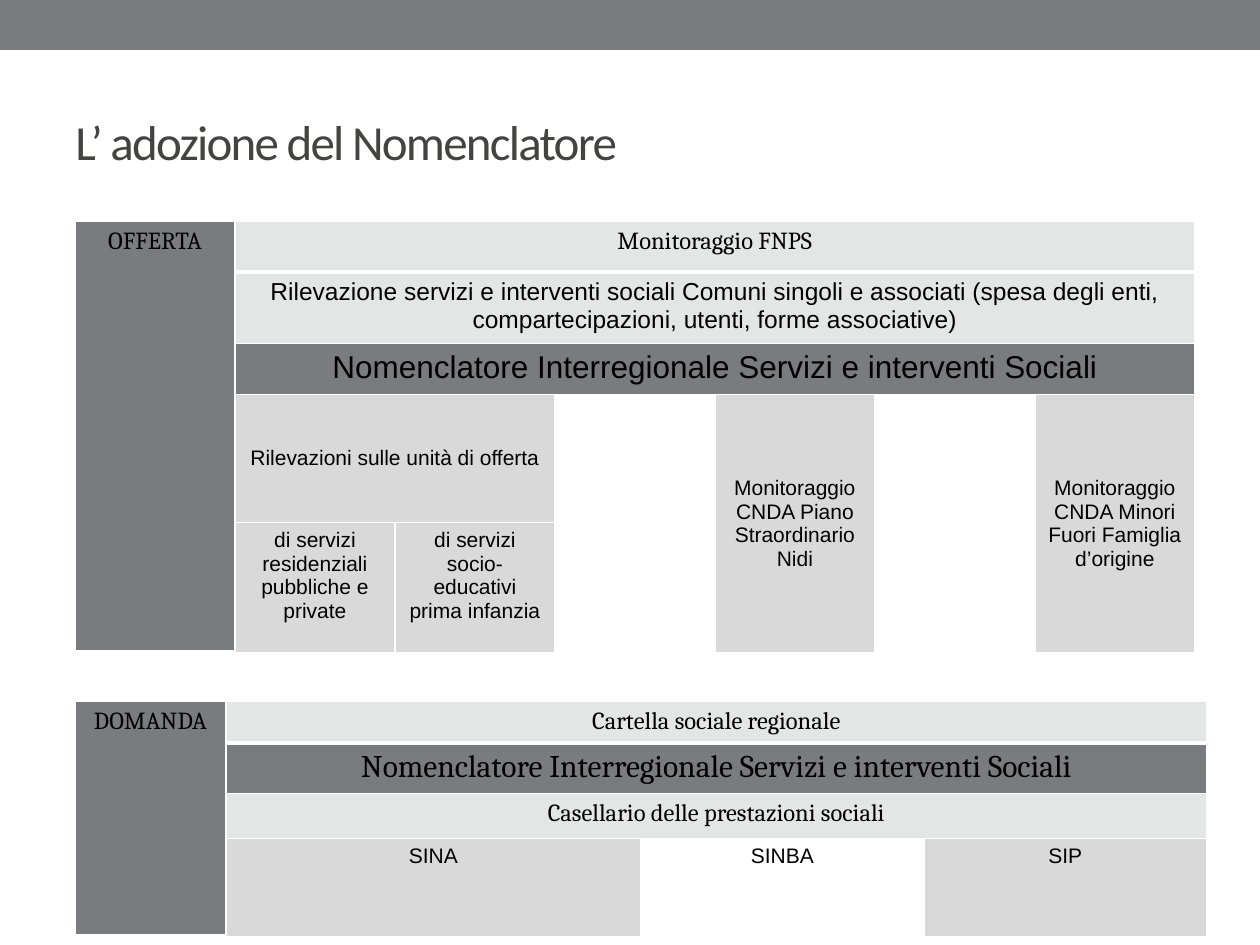
from dataclasses import dataclass

from lxml import etree
from pptx import Presentation
from pptx import util as u
from pptx.dml.color import RGBColor
from pptx.enum import shapes, text
from pptx.oxml.ns import qn


@dataclass(frozen=True)
class Theme:
    dark: str = "797B7E"
    pale: str = "E4E5E5"
    grey: str = "D9D9D9"
    white: str = "FFFFFF"
    black: str = "000000"
    ink: str = "434342"
    head: str = "Calibri"
    serif: str = "Cambria"
    sans: str = "Arial"
    title: int = 28
    large: int = 18
    body: int = 14
    small: int = 12
    thin: int = 1
    thick: int = 3


T = Theme()
NOMEN = "Nomenclatore Interregionale Servizi e interventi Sociali"


def px(n):
    return u.Emu(round(n * 914400 / 126))


def paint(fill, color):
    fill.solid()
    fill.fore_color.rgb = RGBColor.from_string(color)


def style(run, size, face, color):
    run.font.size = u.Pt(size)
    run.font.name = face
    run.font.color.rgb = RGBColor.from_string(color)


def add_band(slide):
    band = slide.shapes.add_shape(
        shapes.MSO_SHAPE.RECTANGLE, 0, 0, px(1260), px(50))
    band.shadow.inherit = False
    paint(band.fill, T.dark)
    band.line.fill.background()


def add_title(slide, words):
    box = slide.shapes.add_textbox(px(63), px(73), px(1134), px(136))
    frame = box.text_frame
    frame.word_wrap = True
    frame.vertical_anchor = text.MSO_ANCHOR.MIDDLE
    frame.text = words
    run = frame.paragraphs[0].runs[0]
    style(run, T.title, T.head, T.ink)
    run.font._element.set("spc", "-100")


def add_edges(cell, top, bottom):
    """Draw white cell borders; top and bottom are widths in points."""
    props = cell._tc.get_or_add_tcPr()
    widths = {"lnL": T.thin, "lnR": T.thin, "lnT": top, "lnB": bottom}
    for tag, width in widths.items():
        line = etree.SubElement(props, qn("a:" + tag), w=str(u.Pt(width)))
        fill = etree.SubElement(line, qn("a:solidFill"))
        etree.SubElement(fill, qn("a:srgbClr"), val=T.white)


def fill_cell(grid, row, col, words, color, size, face, span=(1, 1), mid=False):
    """Write one cell; span counts the rows and columns it covers."""
    cell = grid.cell(row, col)
    if span != (1, 1):
        cell.merge(grid.cell(row + span[0] - 1, col + span[1] - 1))
    paint(cell.fill, color)
    if mid:
        cell.vertical_anchor = text.MSO_ANCHOR.MIDDLE
    cell.text_frame.text = words
    para = cell.text_frame.paragraphs[0]
    para.alignment = text.PP_ALIGN.CENTER
    style(para.runs[0], size, face, T.black)


def add_grid(slide, top, cols, rows, cells):
    frame = slide.shapes.add_table(
        len(rows), len(cols), px(75), px(top), px(sum(cols)), px(sum(rows)))
    grid = frame.table
    grid.first_row = grid.horz_banding = False
    for col, width in zip(grid.columns, cols):
        col.width = px(width)
    for row, height in zip(grid.rows, rows):
        row.height = px(height)
    for r in range(len(rows)):
        for c in range(len(cols)):
            cell = grid.cell(r, c)
            add_edges(cell, T.thick if r == 1 else T.thin,
                      T.thick if r == 0 or (c == 0 and r == len(rows) - 1)
                      else T.thin)
            paint(cell.fill, T.white)
    for args in cells:
        fill_cell(grid, *args)


def main():
    deck = Presentation()
    deck.slide_width, deck.slide_height = px(1260), px(945)
    slide = deck.slides.add_slide(deck.slide_layouts[6])
    add_band(slide)
    add_title(slide, "L’ adozione del Nomenclatore")
    add_grid(slide, 221, [160] * 7 + [], [51, 68, 51, 128, 130], [
        (0, 0, "OFFERTA", T.dark, T.body, T.serif, (5, 1)),
        (0, 1, "Monitoraggio FNPS", T.pale, T.body, T.serif, (1, 6)),
        (1, 1, "Rilevazione servizi e interventi sociali Comuni singoli e "
         "associati (spesa degli enti, compartecipazioni, utenti, forme "
         "associative)", T.pale, T.body, T.sans, (1, 6)),
        (2, 1, NOMEN, T.dark, T.large, T.sans, (1, 6)),
        (3, 1, "Rilevazioni sulle unità di offerta",
         T.grey, T.small, T.sans, (1, 2), True),
        (3, 4, "Monitoraggio CNDA Piano Straordinario Nidi",
         T.grey, T.small, T.sans, (2, 1), True),
        (3, 6, "Monitoraggio CNDA Minori Fuori Famiglia d’origine",
         T.grey, T.small, T.sans, (2, 1), True),
        (4, 1, "di servizi residenziali pubbliche e private",
         T.grey, T.small, T.sans),
        (4, 2, "di servizi socio-educativi prima infanzia",
         T.grey, T.small, T.sans),
    ])
    add_grid(slide, 701, [151, 415, 283, 283], [40, 50, 45, 98], [
        (0, 0, "DOMANDA", T.dark, T.body, T.serif, (4, 1)),
        (0, 1, "Cartella sociale regionale",
         T.pale, T.body, T.serif, (1, 3)),
        (1, 1, NOMEN, T.dark, T.large, T.serif, (1, 3)),
        (2, 1, "Casellario delle prestazioni sociali",
         T.pale, T.body, T.serif, (1, 3)),
        (3, 1, "SINA", T.grey, T.small, T.sans),
        (3, 2, "SINBA", T.white, T.small, T.sans),
        (3, 3, "SIP", T.grey, T.small, T.sans),
    ])
    deck.save("out.pptx")


if __name__ == "__main__":
    main()
